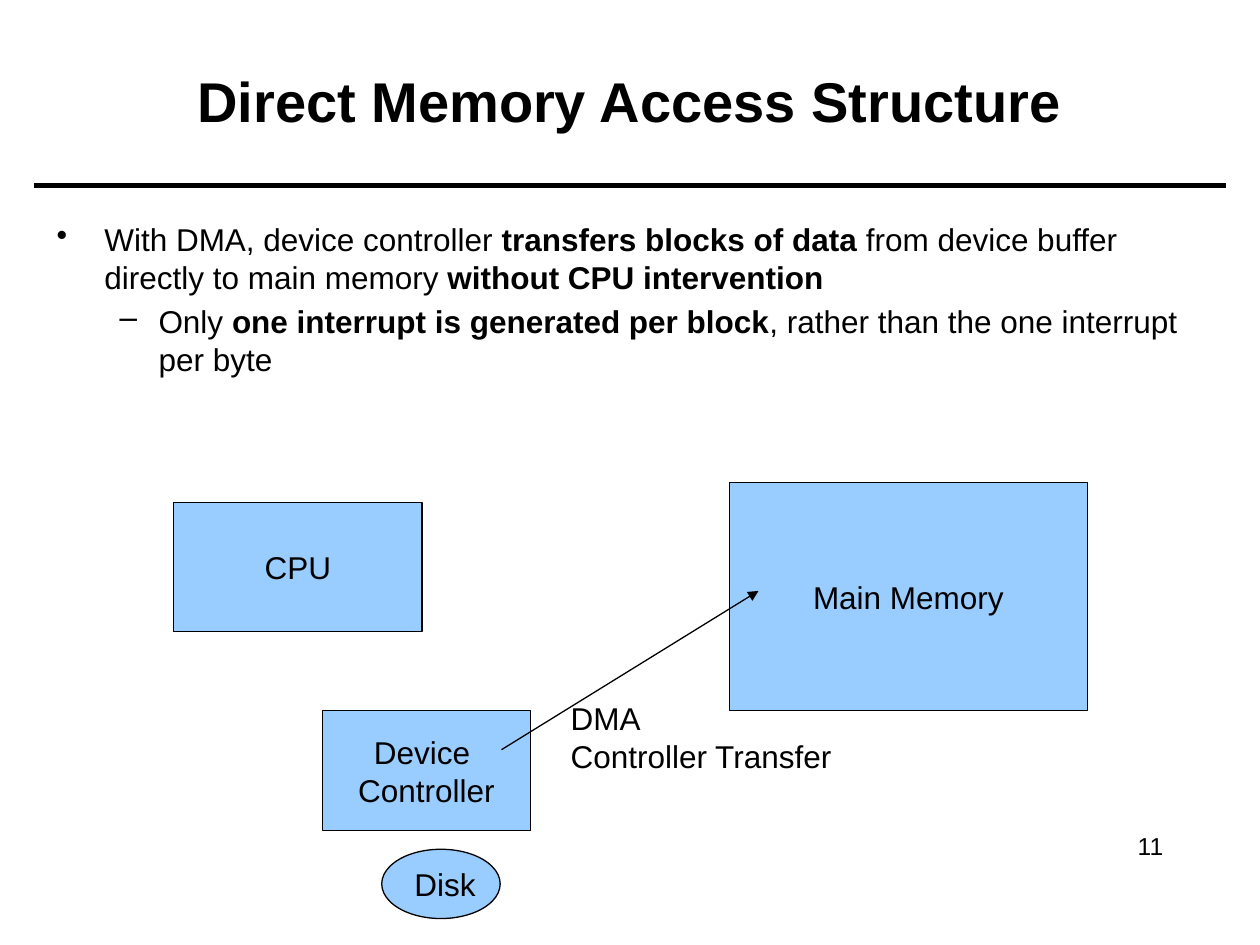
"""Build the Direct Memory Access Structure slide."""
from pptx import Presentation
from pptx.dml.color import RGBColor
from pptx.enum.shapes import MSO_CONNECTOR, MSO_SHAPE
from pptx.enum.text import MSO_ANCHOR, PP_ALIGN
from pptx.oxml.ns import qn
from pptx.util import Inches, Pt
from lxml import etree

RECT, OVAL = MSO_SHAPE.RECTANGLE, MSO_SHAPE.OVAL
STRAIGHT = MSO_CONNECTOR.STRAIGHT
TOP, MIDDLE = MSO_ANCHOR.TOP, MSO_ANCHOR.MIDDLE
LEFT, CENTER, RIGHT = PP_ALIGN.LEFT, PP_ALIGN.CENTER, PP_ALIGN.RIGHT

COLORS = {"ink": "000000", "box": "99CCFF"}
FONT = "Arial"

TITLE = "Direct Memory Access Structure"
BULLETS = [
    ("•", 0.38, 0.38, [
        ("With DMA, device controller ", False),
        ("transfers blocks of data", True),
        (" from device buffer directly to main memory ", False),
        ("without CPU intervention", True)]),
    ("–", 0.81, 0.31, [
        ("Only ", False),
        ("one interrupt is generated per block", True),
        (", rather than the one interrupt per byte", False)]),
]
NODES = [
    (OVAL, (3.03, 6.74, 0.94, 0.55), ""),
    (RECT, (2.56, 5.64, 1.65, 0.95), "Device \vController"),
    (RECT, (5.79, 3.83, 2.84, 1.81), "Main Memory"),
    (RECT, (1.38, 3.99, 1.97, 1.02), "CPU"),
]
LABELS = [
    ((4.43, 5.5, 2.28, 0.7), ["DMA", "Controller Transfer"]),
    ((3.19, 6.82, 0.69, 0.4), ["Disk"]),
]


def rgb(name):
    return RGBColor.from_string(COLORS[name])


def style(p, size=18, align=LEFT, bold=None):
    p.alignment = align
    p.font.name, p.font.size, p.font.bold = FONT, Pt(size), bold
    p.font.color.rgb = rgb("ink")


def add_text(slide, box, lines, size=18, align=LEFT, bold=None, anchor=TOP, wrap=True):
    tf = slide.shapes.add_textbox(*map(Inches, box)).text_frame
    tf.word_wrap, tf.vertical_anchor = wrap, anchor
    tf.text = "\n".join(lines)
    for p in tf.paragraphs:
        style(p, size, align, bold)
    return tf


def add_line(slide, start, end, width, arrow=False):
    s = slide.shapes.add_connector(STRAIGHT, *map(Inches, start + end))
    s.line.color.rgb, s.line.width = rgb("ink"), Pt(width)
    if arrow:
        etree.SubElement(s.line._get_or_add_ln(), qn("a:tailEnd"), type="triangle")
    etree.SubElement(s._element.spPr, qn("a:effectLst"))


def add_node(slide, kind, box, text):
    s = slide.shapes.add_shape(kind, *map(Inches, box))
    s.shadow.inherit = False
    s.fill.solid()
    s.fill.fore_color.rgb = rgb("box")
    s.line.color.rgb, s.line.width = rgb("ink"), Pt(0.75)
    if text:
        tf = s.text_frame
        tf.word_wrap, tf.vertical_anchor = False, MIDDLE
        p = tf.paragraphs[0]
        p.text = text
        style(p, align=CENTER)


def add_bullets(slide, box):
    tf = add_text(slide, box, [""] * len(BULLETS))
    for p, (mark, margin, hang, runs) in zip(tf.paragraphs, BULLETS):
        p.space_before = Pt(3.6)
        for text, bold in runs:
            r = p.add_run()
            r.text, r.font.bold = text, bold
            r.font.name, r.font.size = FONT, Pt(18)
            r.font.color.rgb = rgb("ink")
        pPr = p._p.get_or_add_pPr()
        pPr.set("marL", str(Inches(margin)))
        pPr.set("indent", str(-Inches(hang)))
        bullet = etree.Element(qn("a:buChar"), char=mark)
        pPr.find(qn("a:spcBef")).addnext(bullet)


def main():
    prs = Presentation()
    prs.slide_width, prs.slide_height = Inches(10), Inches(7.5)
    slide = prs.slides.add_slide(prs.slide_layouts[6])
    add_line(slide, (0.27, 1.47), (9.73, 1.47), 3)
    add_text(slide, (8.29, 6.55, 1.04, 0.34), ["11"], 14, RIGHT)
    add_text(slide, (0.35, 0.17, 9.29, 1.25), [TITLE], 32, CENTER, True, MIDDLE)
    add_bullets(slide, (0.35, 1.7, 9.29, 5.12))
    for node in NODES:
        add_node(slide, *node)
    add_line(slide, (3.98, 5.95), (6.02, 4.69), 0.75, arrow=True)
    for box, lines in LABELS:
        add_text(slide, box, lines, wrap=False)
    prs.save("out.pptx")


if __name__ == "__main__":
    main()
